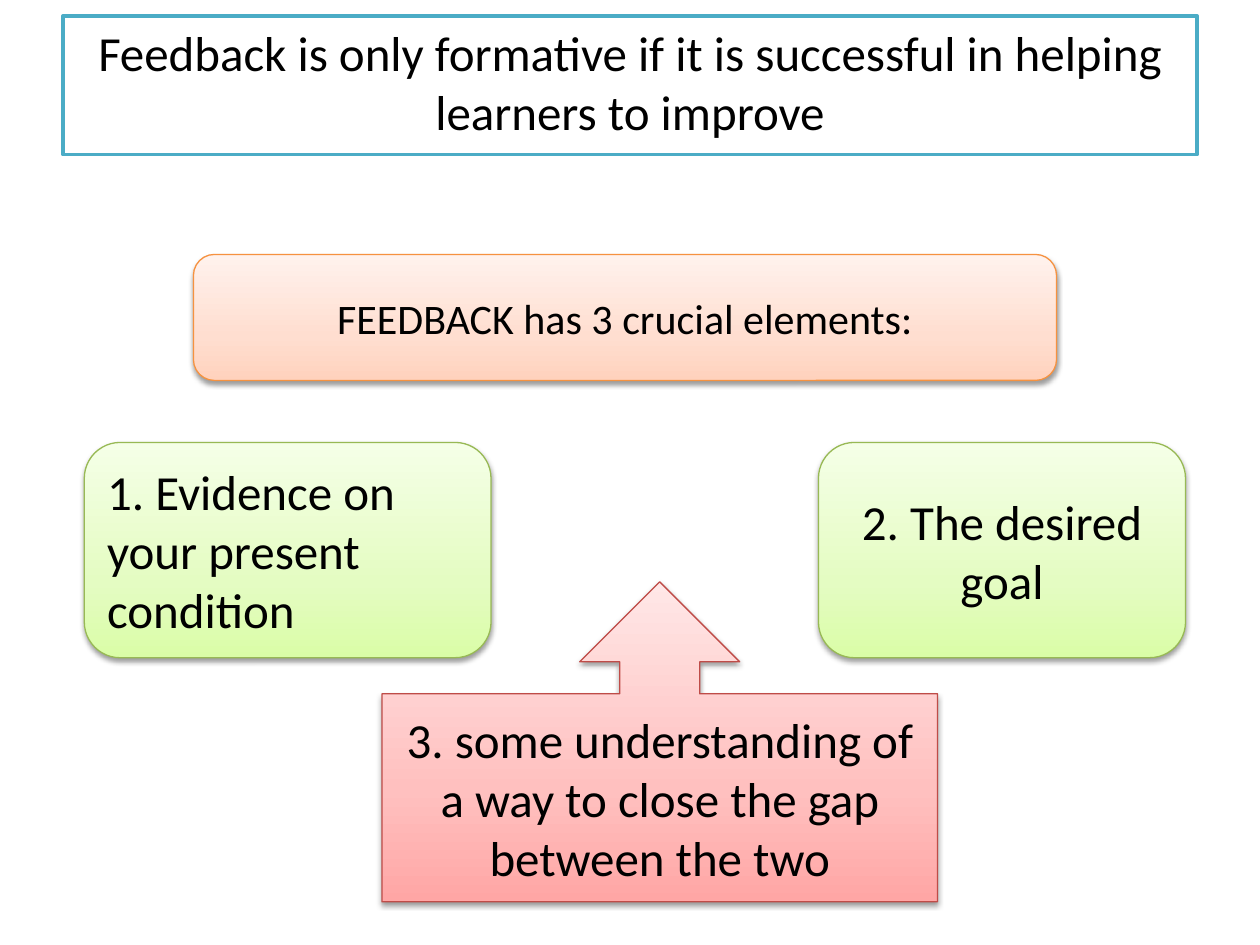
from copy import deepcopy

from lxml.etree import SubElement
from pptx import Presentation
from pptx.dml.color import RGBColor
from pptx.enum.shapes import MSO_SHAPE as Shape
from pptx.enum.text import MSO_ANCHOR as Anchor, MSO_AUTO_SIZE as AutoSize, PP_ALIGN as Align
from pptx.oxml.ns import qn
from pptx.util import Cm, Pt

COLORS = {
    "text": "000000",
    "background": "FFFFFF",
    "title_line": "4BACC6",
    "shadow": "000000",
    "orange": ("F69240", "FFD2BD", "FFDED0", "FFF2ED"),
    "green": ("98B955", "DAFDA7", "E4FCC2", "F5FFE7"),
    "red": ("BF4C48", "FFA6A5", "FFC0BF", "FFE7E7"),
}


def write_text(shape, text, size, align, anchor):
    frame = shape.text_frame
    frame.text = text
    frame.word_wrap = True
    frame.auto_size = AutoSize.NONE
    frame.vertical_anchor = anchor
    paragraph = frame.paragraphs[0]
    paragraph.alignment = align
    font = paragraph.runs[0].font
    font.name = "Calibri"
    font.size = Pt(size)
    font.color.rgb = RGBColor.from_string(COLORS["text"])


def style_box(shape, palette):
    """Apply outline, three-stop vertical gradient and soft drop shadow."""
    line_color, *stop_colors = palette
    shape.line.color.rgb = RGBColor.from_string(line_color)
    shape.line.width = Pt(0.75)

    shape.fill.gradient()
    shape.fill.gradient_angle = 90
    stop_list = shape.element.spPr.find(qn("a:gradFill")).find(qn("a:gsLst"))
    stop_list.insert(1, deepcopy(stop_list[0]))
    for stop, position, color in zip(shape.fill.gradient_stops, (0, 0.35, 1), stop_colors):
        stop.position = position
        stop.color.rgb = RGBColor.from_string(color)

    shape.shadow.inherit = False
    effects = shape.element.spPr.find(qn("a:effectLst"))
    shadow = SubElement(effects, qn("a:outerShdw"), blurRad=str(Pt(3.1)),
                        dist=str(Pt(1.6)), dir="5400000", rotWithShape="0")
    color = SubElement(shadow, qn("a:srgbClr"), val=COLORS["shadow"])
    SubElement(color, qn("a:alpha"), val="38000")


presentation = Presentation()
presentation.slide_width = Cm(25.4)
presentation.slide_height = Cm(19.05)
slide = presentation.slides.add_slide(presentation.slide_layouts[5])

title = slide.shapes.title
title.left, title.top, title.width, title.height = Cm(1.27), Cm(0.32), Cm(22.86), Cm(2.8)
title.fill.solid()
title.fill.fore_color.rgb = RGBColor.from_string(COLORS["background"])
title.line.color.rgb = RGBColor.from_string(COLORS["title_line"])
title.line.width = Pt(2)
write_text(title, "Feedback is only formative if it is successful in helping learners to improve",
           28, Align.CENTER, Anchor.TOP)

# kind, left, top, width, height (cm), palette, text, size, alignment
boxes = [
    (Shape.ROUNDED_RECTANGLE, 3.9, 5.13, 17.4, 2.54, "orange",
     "FEEDBACK has 3 crucial elements:", 24, Align.CENTER),
    (Shape.ROUNDED_RECTANGLE, 1.7, 8.92, 8.2, 4.34, "green",
     "1. Evidence on your present condition", 28, Align.LEFT),
    (Shape.ROUNDED_RECTANGLE, 16.5, 8.92, 7.4, 4.34, "green",
     "2. The desired goal", 28, Align.CENTER),
    (Shape.UP_ARROW_CALLOUT, 7.7, 11.73, 11.2, 6.45, "red",
     "3. some understanding of a way to close the gap between the two", 28, Align.CENTER),
]
for kind, left, top, width, height, palette, text, size, align in boxes:
    box = slide.shapes.add_shape(kind, Cm(left), Cm(top), Cm(width), Cm(height))
    style_box(box, COLORS[palette])
    write_text(box, text, size, align, Anchor.MIDDLE)

presentation.save("out.pptx")
